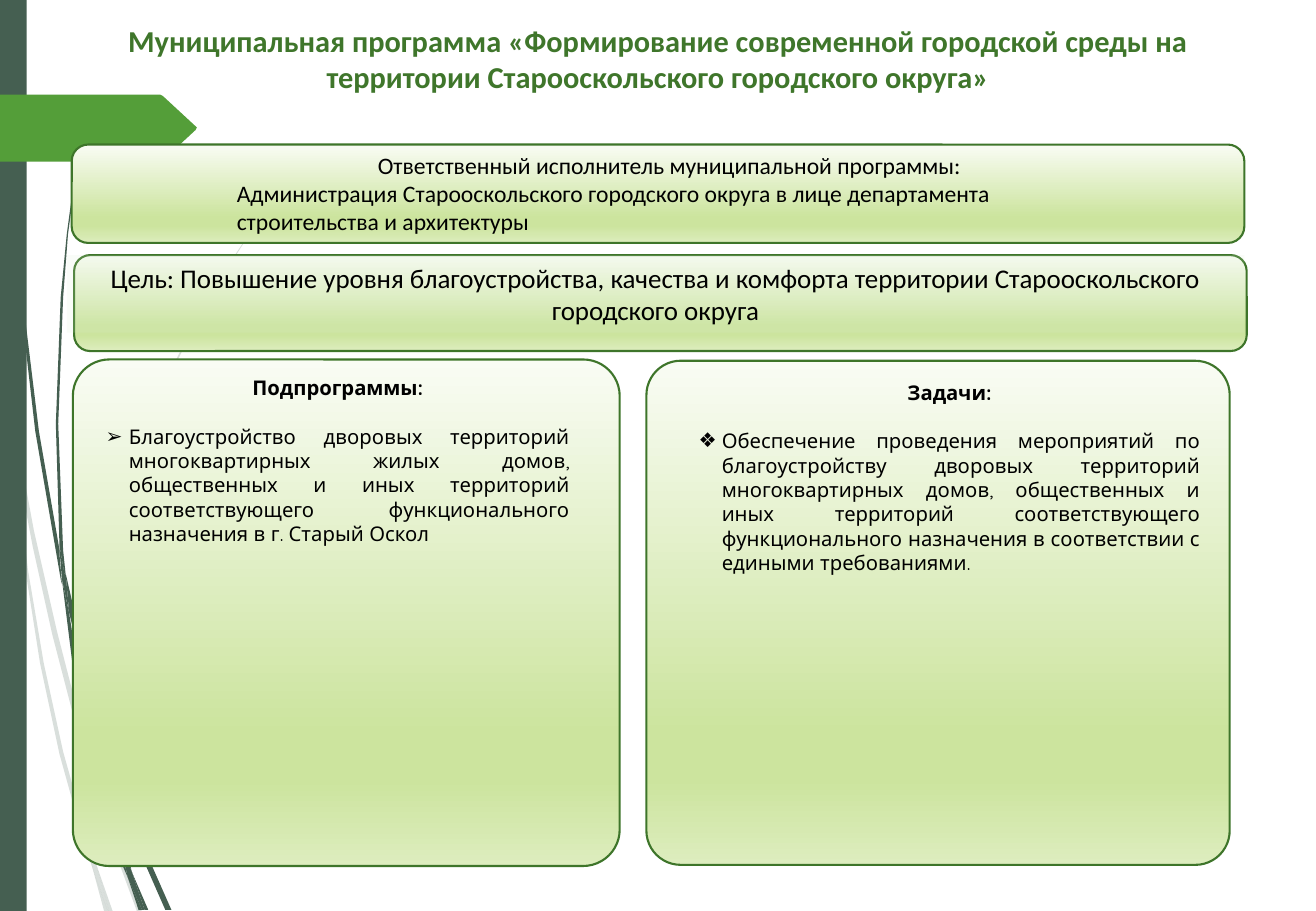
from pptx import Presentation
from pptx import util as u
from pptx.dml.color import RGBColor
from pptx.enum import shapes, text
from pptx.oxml import parse_xml
from pptx.oxml.ns import nsdecls, qn

C = {"dark": "455F51", "arrow": "549E39", "title": "3F762B", "edge": "3E752A",
     "text": "000000", "tint": "DBEFD4"}
GRADIENT = [(0, "F9FCF4"), (74, "CCE49E"), (83, "CCE49E"), (100, "DDEDBE")]

TITLE = "Муниципальная программа «Формирование современной городской среды на территории Старооскольского городского округа»"
EXECUTOR = ["Ответственный исполнитель муниципальной программы:",
            "Администрация Старооскольского городского округа в лице департамента строительства и архитектуры"]
GOAL = "Цель: Повышение уровня благоустройства, качества и комфорта территории Старооскольского городского округа"
COLUMNS = [
    (1, (0.77, 3.04, 4.02, 1.51), "Подпрограммы:", "➢",
     "Благоустройство дворовых территорий многоквартирных жилых домов, общественных и иных территорий соответствующего функционального назначения в г. Старый Оскол"),
    (2, (5.65, 3.08, 4.33, 1.72), "Задачи:", "❖",
     "Обеспечение проведения мероприятий по благоустройству дворовых территорий многоквартирных домов, общественных и иных территорий соответствующего функционального назначения в соответствии с едиными требованиями."),
]
PANELS = [((0.59, 1.19, 9.65, 0.81), 0.167), ((0.6, 2.96, 4.5, 4.17), 0.072),
          ((5.32, 2.97, 4.8, 4.15), 0.068), ((0.61, 2.1, 9.65, 0.79), 0.167)]

# Outline points are in hundredths of an inch.
PALE_BLADES = [
    [(8, 350), (6, 322), (0, 282), (0, 299), (8, 344)],
    [(43, 522), (63, 599), (64, 586), (47, 520), (28, 437), (11, 345), (13, 376), (27, 450)],
    [(69, 607), (66, 596), (66, 610), (92, 694), (113, 751), (117, 751), (96, 692)],
    [(90, 751), (93, 751), (79, 711)],
    [(70, 683), (52, 619), (36, 546), (23, 469), (13, 376), (8, 350), (21, 470),
     (33, 546), (49, 621), (69, 693), (76, 714), (74, 707)],
    [(63, 599), (65, 646), (70, 683), (73, 692), (79, 711), (78, 706), (68, 646), (66, 610)],
    [(66, 584), (83, 462), (120, 349), (172, 245), (202, 198), (218, 175), (235, 154),
     (235, 153), (218, 175), (202, 197), (171, 244), (119, 348), (81, 461), (64, 584),
     (64, 586), (66, 596)],
    [(76, 714), (86, 751), (89, 751)],
    [(66, 608), (66, 596), (64, 586), (63, 599)],
    [(73, 692), (70, 683), (74, 707), (76, 714), (89, 751), (90, 751), (79, 711)],
]
DARK_BLADES = [
    [(6, 110), (15, 233), (29, 355), (50, 477), (51, 481), (49, 457), (49, 453),
     (32, 355), (17, 232), (7, 109), (4, 48), (3, 0), (2, 0), (3, 48)],
    [(79, 592), (95, 645), (95, 631), (83, 590), (68, 533), (54, 472), (57, 505), (68, 549)],
    [(101, 649), (99, 641), (99, 656), (118, 708), (136, 749), (141, 749), (122, 706)],
    [(98, 691), (88, 657), (75, 607), (65, 556), (57, 505), (51, 477), (61, 557),
     (71, 608), (83, 659), (99, 708), (105, 722), (104, 717)],
    [(54, 472), (52, 453), (48, 349), (52, 245), (56, 193), (63, 141), (62, 141),
     (55, 193), (50, 245), (46, 349), (49, 449), (53, 472)],
    [(119, 749), (122, 749), (109, 719)],
    [(51, 477), (57, 505), (54, 472), (53, 472), (49, 449), (49, 453)],
    [(99, 633), (112, 552), (142, 476), (183, 406), (207, 374), (220, 359), (234, 344),
     (233, 344), (220, 358), (207, 373), (182, 405), (140, 474), (109, 551), (95, 631), (99, 641)],
    [(105, 722), (114, 749), (117, 749)],
    [(95, 645), (99, 691), (104, 706), (109, 719), (108, 716), (99, 656), (97, 651)],
    [(95, 645), (97, 651), (99, 656), (99, 641), (95, 631)],
    [(104, 706), (99, 691), (104, 717), (105, 722), (117, 749), (119, 749), (109, 719)],
]
ARROW = [(0, 78), (132, 78), (134, 79), (161, 104), (162, 105), (161, 107),
         (134, 132), (132, 133), (0, 133)]


def place(sp, box):
    for name, value in zip(("left", "top", "width", "height"), box):
        setattr(sp, name, u.Inches(value))


def paint(sp, color, opacity=100):
    sp.shadow.inherit = False
    sp.fill.solid()
    sp.fill.fore_color.rgb = RGBColor.from_string(C[color])
    sp.line.fill.background()
    if opacity < 100:
        clr = sp._element.spPr.find(".//" + qn("a:srgbClr"))
        clr.append(parse_xml(f'<a:alpha {nsdecls("a")} val="{opacity * 1000}"/>'))


def outline(s, points, color, opacity=100):
    fb = s.shapes.build_freeform(*points[0], scale=u.Inches(0.01))
    fb.add_line_segments(points[1:], close=True)
    paint(fb.convert_to_shape(), color, opacity)


def add_shape(s, kind, box):
    return s.shapes.add_shape(kind, *map(u.Inches, box))


def panel(s, box, radius):
    sp = add_shape(s, shapes.MSO_SHAPE.ROUNDED_RECTANGLE, box)
    sp.adjustments[0] = radius
    sp.shadow.inherit = False
    sp.fill.gradient()
    sp.fill.gradient_angle = 270
    stops = sp._element.spPr.find(".//" + qn("a:gsLst"))
    for gs in list(stops):
        stops.remove(gs)
    for pos, color in GRADIENT:
        stops.append(parse_xml(f'<a:gs {nsdecls("a")} pos="{pos * 1000}"><a:srgbClr val="{color}"/></a:gs>'))
    sp.line.color.rgb = RGBColor.from_string(C["edge"])
    sp.line.width = u.Pt(1.25)


def write(sp, lines, size, font, color="text", anchor=text.MSO_ANCHOR.TOP):
    tf = sp.text_frame
    frame = {"word_wrap": True, "auto_size": text.MSO_AUTO_SIZE.NONE, "vertical_anchor": anchor}
    for name, value in frame.items():
        setattr(tf, name, value)
    for i, (words, align, bold, bullet) in enumerate(lines):
        p = tf.paragraphs[0] if i == 0 else tf.add_paragraph()
        pPr = p._p.get_or_add_pPr()
        indent = u.Inches(0.19) if bullet else 0
        pPr.set("marL", str(indent))
        pPr.set("indent", str(-indent))
        mark = f'<a:buChar {nsdecls("a")} char="{bullet}"/>' if bullet else f'<a:buNone {nsdecls("a")}/>'
        pPr.append(parse_xml(mark))
        p.alignment = align
        p.space_before = u.Pt(14.4 if bullet else 0)
        r = p.add_run()
        r.text = words
        for name, value in {"size": u.Pt(size), "name": font, "bold": bold}.items():
            setattr(r.font, name, value)
        r.font.color.rgb = RGBColor.from_string(C[color])


def main():
    prs = Presentation()
    prs.slide_width, prs.slide_height = u.Inches(10.83), u.Inches(7.5)
    s = prs.slides.add_slide(prs.slide_layouts[3])
    left, center, justify = text.PP_ALIGN.LEFT, text.PP_ALIGN.CENTER, text.PP_ALIGN.JUSTIFY

    for points in PALE_BLADES:
        outline(s, points, "dark", 20)
    for points in DARK_BLADES:
        outline(s, points, "dark")
    paint(add_shape(s, shapes.MSO_SHAPE.RECTANGLE, (0, 0, 0.22, 7.5)), "dark")
    outline(s, ARROW, "arrow")
    for box, radius in PANELS:
        panel(s, box, radius)

    title = s.shapes.title
    place(title, (0.61, 0.13, 9.61, 0.71))
    write(title, [(TITLE, center, True, None)], 18, "Calibri", "title")
    s.shapes._spTree.append(title._element)

    executor = s.shapes.add_textbox(*map(u.Inches, (1.85, 1.19, 7.32, 0.81)))
    write(executor, [(words, align, False, None) for words, align in zip(EXECUTOR, (center, left))],
          14, "Calibri")

    goal = add_shape(s, shapes.MSO_SHAPE.RECTANGLE, (0.55, 2.1, 9.69, 0.64))
    paint(goal, "tint", 15)
    write(goal, [(GOAL, center, False, None)], 16, "Calibri", anchor=text.MSO_ANCHOR.MIDDLE)

    for idx, box, heading, bullet, item in COLUMNS:
        body = s.placeholders[idx]
        place(body, box)
        write(body, [(heading, center, True, None), (item, justify, False, bullet)], 12, "Quicksand")
        s.shapes._spTree.append(body._element)

    prs.save("out.pptx")


if __name__ == "__main__":
    main()
